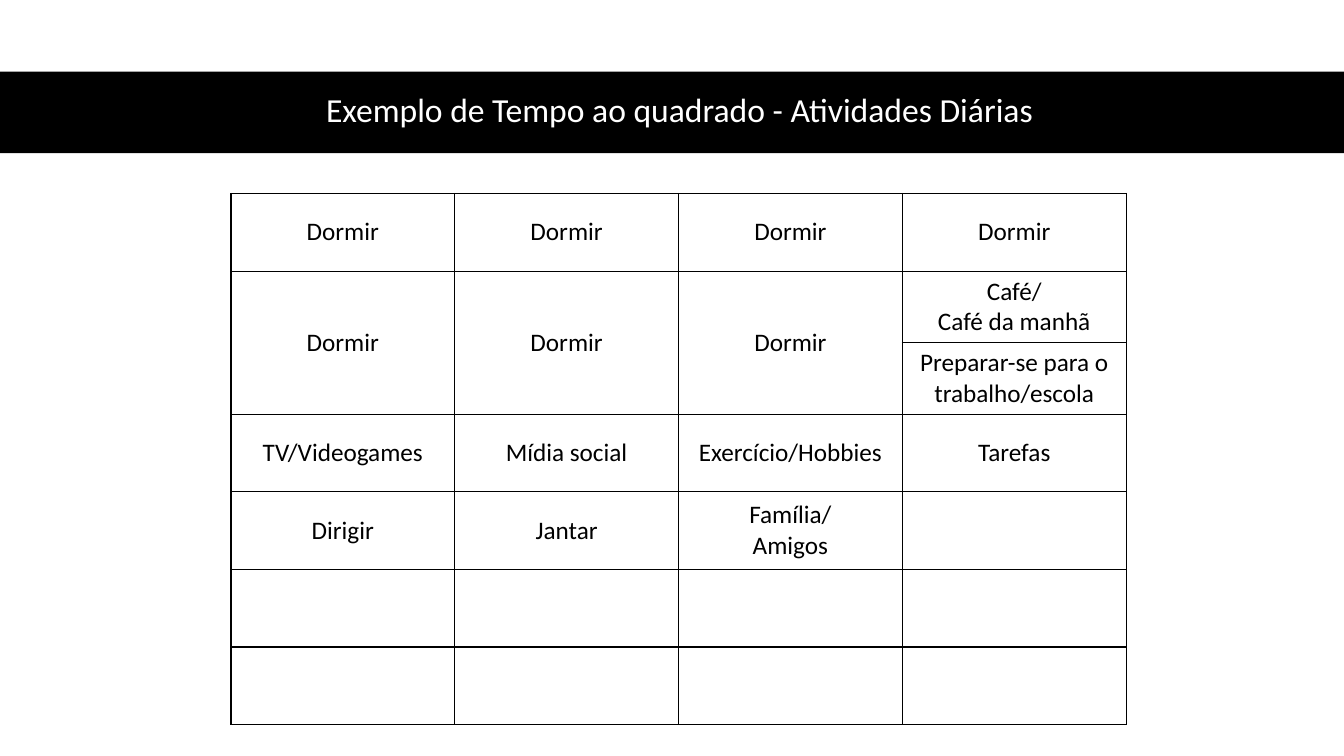
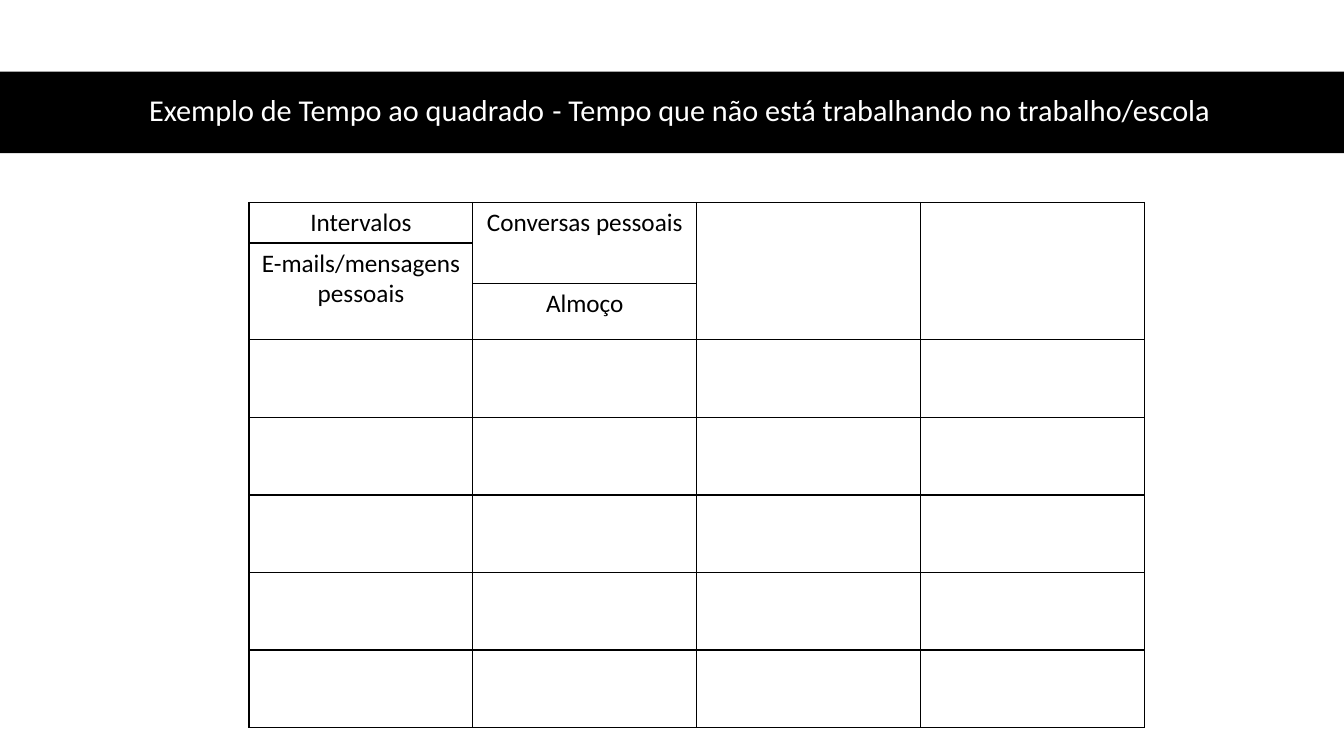
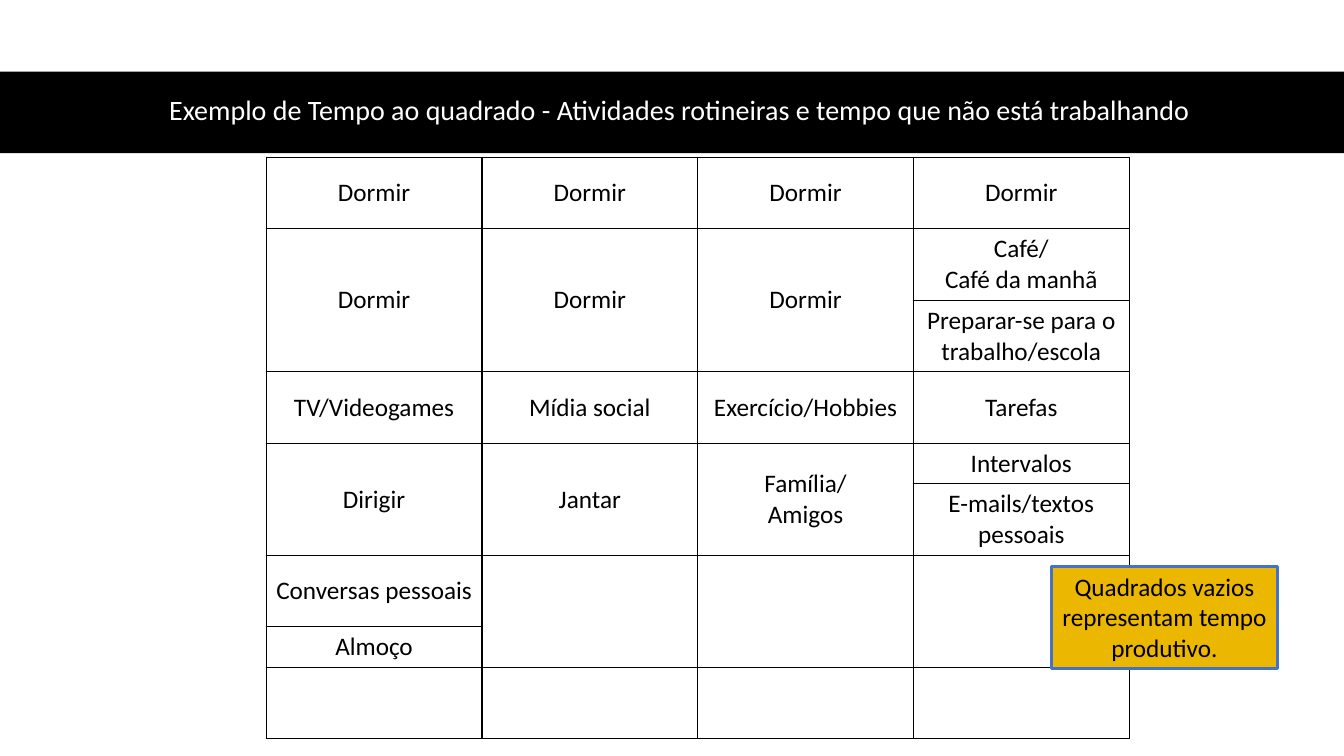
from dataclasses import dataclass

from lxml import etree
from pptx import Presentation
from pptx.dml.color import RGBColor
from pptx.enum.shapes import MSO_SHAPE
from pptx.enum.text import MSO_ANCHOR, PP_ALIGN
from pptx.oxml.ns import qn
from pptx.util import Inches, Pt

RECT = MSO_SHAPE.RECTANGLE
CENTER = PP_ALIGN.CENTER
TOP, MIDDLE = MSO_ANCHOR.TOP, MSO_ANCHOR.MIDDLE


# Colours and type sizes
@dataclass(frozen=True)
class Theme:
    font: str = "Calibri"
    black: str = "000000"
    white: str = "FFFFFF"
    gold: str = "EBB700"
    blue: str = "4472C4"
    body: float = 18
    grid: float = 1
    edge: float = 2.25


THEME = Theme()

# Table content; UP joins a cell to the one above it
UP = "^"
BLANK = [""] * 4
ROUTINE = [
    ["Dormir"] * 4,
    ["Dormir"] * 3 + ["Café/\vCafé da manhã"],
    [UP] * 3 + ["Preparar-se para o trabalho/escola"],
    ["TV/Videogames", "Mídia social", "Exercício/Hobbies", "Tarefas"],
]
EVENING = ["Dirigir", "Jantar", "Família/\vAmigos"]

DAILY = ROUTINE + [EVENING + [""], BLANK, BLANK]
BREAKS = [
    ["Intervalos", "Conversas pessoais", "", ""],
    ["E-mails/mensagens pessoais", UP, UP, UP],
    [UP, "Almoço", UP, UP],
] + [BLANK] * 5
TOTAL = ROUTINE + [
    EVENING + ["Intervalos"],
    [UP] * 3 + ["E-mails/textos pessoais"],
    ["Conversas pessoais", "", "", ""],
    ["Almoço", UP, UP, UP],
    BLANK,
]


def color(code):
    return RGBColor.from_string(code)


def style(frame, size, ink):
    """Centre every paragraph and set the font of its runs."""
    for para in frame.paragraphs:
        para.alignment = CENTER
        for run in para.runs:
            run.font.name = THEME.font
            run.font.size = Pt(size)
            run.font.color.rgb = color(ink)


def add_box(slide, place, fill, line=None):
    box = slide.shapes.add_shape(RECT, *map(Inches, place))
    box.shadow.inherit = False
    box.fill.solid()
    box.fill.fore_color.rgb = color(fill)
    if line:
        box.line.color.rgb = color(line)
        box.line.width = Pt(THEME.edge)
    else:
        box.line.fill.background()
    return box


def add_title(slide, text, size):
    """Black band across the slide with the title over it."""
    add_box(slide, (0, 0.71, 13.33, 0.81), THEME.black)
    title = slide.shapes.add_textbox(*map(Inches, (0.61, 0.7, 12.26, 0.81)))
    frame = title.text_frame
    frame.word_wrap = True
    frame.vertical_anchor = MIDDLE
    frame.text = text
    frame.paragraphs[0].line_spacing = 0.9
    style(frame, size, THEME.white)


def add_border(cell):
    props = cell._tc.get_or_add_tcPr()
    for spot, side in enumerate(("lnL", "lnR", "lnT", "lnB")):
        line = etree.Element(qn(f"a:{side}"), w=str(Pt(THEME.grid)))
        fill = etree.SubElement(line, qn("a:solidFill"))
        etree.SubElement(fill, qn("a:srgbClr"), val=THEME.black)
        props.insert(spot, line)


def add_grid(slide, left, top, width, heights, rows, anchor):
    count = len(rows[0])
    table = slide.shapes.add_table(
        len(rows), count, Inches(left), Inches(top),
        Inches(width * count), Inches(sum(heights))).table
    table.first_row = table.horz_banding = False
    for col in table.columns:
        col.width = Inches(width)
    for row, height in zip(table.rows, heights):
        row.height = Inches(height)

    for r, texts in enumerate(rows):
        for c, text in enumerate(texts):
            cell = table.cell(r, c)
            cell.fill.background()
            cell.vertical_anchor = anchor
            add_border(cell)
            if text == UP:
                continue
            cell.text_frame.text = text
            style(cell.text_frame, THEME.body, THEME.black)
            # Join the marked cells below
            last = r
            while last + 1 < len(rows) and rows[last + 1][c] == UP:
                last += 1
            if last > r:
                cell.merge(table.cell(last, c))


def add_note(slide, place, text):
    note = add_box(slide, place, THEME.gold, THEME.blue)
    frame = note.text_frame
    frame.word_wrap = True
    frame.vertical_anchor = TOP
    frame.text = text
    style(frame, THEME.body, THEME.black)


def main():
    deck = Presentation()
    deck.slide_width, deck.slide_height = Inches(13.33), Inches(7.5)
    blank = deck.slide_layouts[6]

    # Daily activities
    slide = deck.slides.add_slide(blank)
    add_title(slide, "Exemplo de Tempo ao quadrado - Atividades Diárias", 24)
    add_grid(slide, 2.29, 1.92, 2.22, [0.77] + [0.71] * 2 + [0.77] * 4,
             DAILY, MIDDLE)

    # Time off at work or school
    slide = deck.slides.add_slide(blank)
    add_title(slide, "Exemplo de Tempo ao quadrado\t- Tempo que não está "
              "trabalhando no trabalho/escola", 21.6)
    add_grid(slide, 2.47, 2.01, 2.22, [0.4, 0.4, 0.56] + [0.77] * 5,
             BREAKS, TOP)

    # Both together
    slide = deck.slides.add_slide(blank)
    add_title(slide, "Exemplo de Tempo ao quadrado - Atividades rotineiras "
              "e tempo que não está trabalhando", 20)
    add_grid(slide, 2.64, 1.56, 2.14,
             [0.71] * 4 + [0.4, 0.71, 0.71, 0.4, 0.71], TOTAL, MIDDLE)
    add_note(slide, (10.43, 5.62, 2.24, 1.01),
             "Quadrados vazios representam tempo produtivo.")

    deck.save("out.pptx")


if __name__ == "__main__":
    main()
